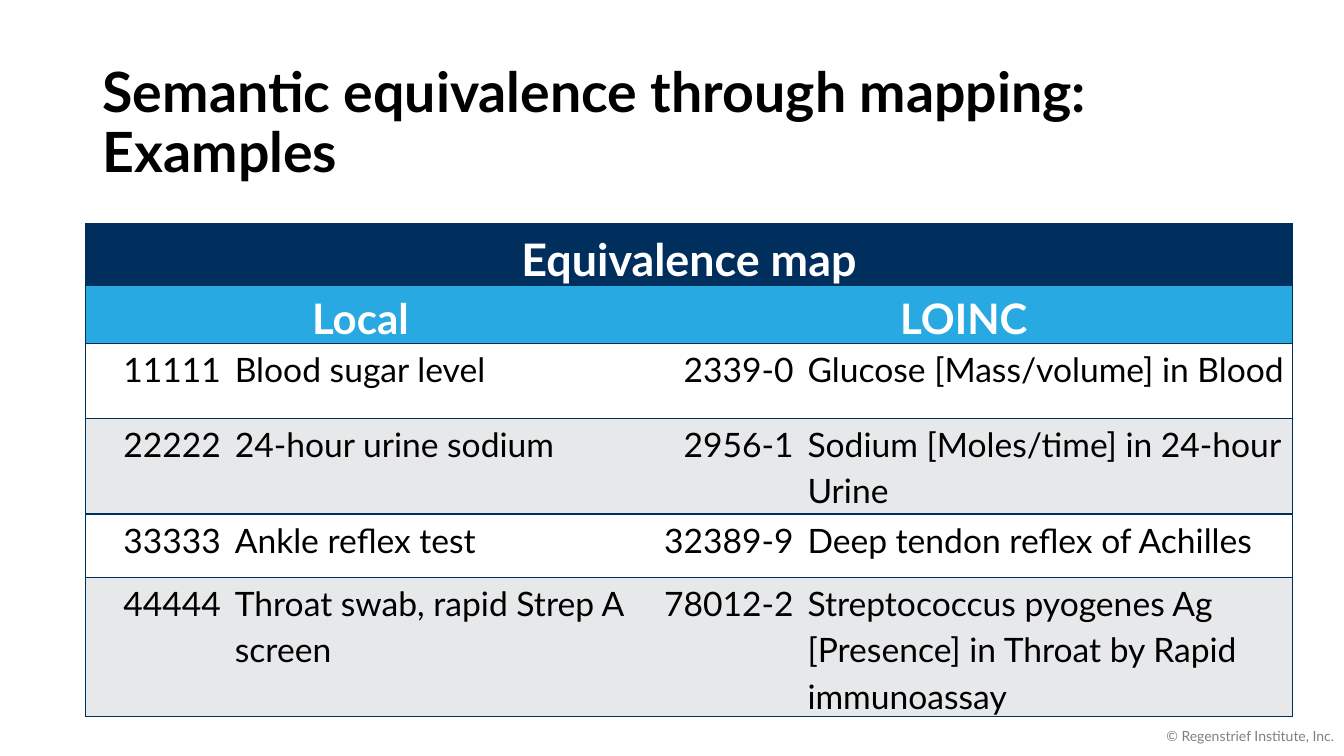
import lxml.etree
import pptx
import pptx.dml.color
import pptx.enum.text
import pptx.oxml.ns
import pptx.util

NAVY = pptx.dml.color.RGBColor(0x00, 0x2E, 0x5D)
SKY = pptx.dml.color.RGBColor(0x29, 0xA9, 0xE1)
PALE = pptx.dml.color.RGBColor(0xE7, 0xE8, 0xEA)
WHITE = pptx.dml.color.RGBColor(0xFF, 0xFF, 0xFF)
BLACK = pptx.dml.color.RGBColor(0x00, 0x00, 0x00)
GRAY = pptx.dml.color.RGBColor(0x80, 0x80, 0x80)

ALIGN = pptx.enum.text.PP_ALIGN
ANCHOR = pptx.enum.text.MSO_ANCHOR

COLUMN_WIDTHS = [14.1, 40.4, 16.4, 48.8]
ROW_HEIGHTS = [6.1, 5.7, 7.4, 9.5, 6.3, 13.6]
MAPPINGS = [
    ("11111", "Blood sugar level", "2339-0", "Glucose [Mass/volume] in Blood"),
    ("22222", "24-hour urine sodium", "2956-1", "Sodium [Moles/time] in 24-hour Urine"),
    ("33333", "Ankle reflex test", "32389-9", "Deep tendon reflex of Achilles"),
    ("44444", "Throat swab, rapid Strep A screen", "78012-2",
     "Streptococcus pyogenes Ag [Presence] in Throat by Rapid immunoassay"),
]


def write(frame, text, size, color=BLACK, bold=False, align=ALIGN.LEFT,
          spacing=1.0, after=0):
    paragraph = frame.paragraphs[0]
    paragraph.text = text
    paragraph.alignment = align
    paragraph.line_spacing = spacing
    paragraph.space_after = pptx.util.Pt(after)
    for run in paragraph.runs:
        run.font.name = "Lato"
        run.font.size = pptx.util.Pt(size)
        run.font.bold = bold
        run.font.color.rgb = color


class GridSlide:
    COLUMNS, ROWS = 133.3, 75

    def __init__(self, deck):
        self.slide = deck.slides.add_slide(deck.slide_layouts[6])
        self.column = deck.slide_width / self.COLUMNS
        self.row = deck.slide_height / self.ROWS

    def place(self, left, top, width, height):
        return (round(left * self.column), round(top * self.row),
                round(width * self.column), round(height * self.row))

    def text(self, box, text, **style):
        frame = self.slide.shapes.add_textbox(*self.place(*box)).text_frame
        frame.word_wrap = True
        frame.vertical_anchor = ANCHOR.MIDDLE
        write(frame, text, **style)

    def table(self, left, top, widths, heights):
        box = self.place(left, top, sum(widths), sum(heights))
        table = self.slide.shapes.add_table(len(heights), len(widths), *box).table
        for column, width in zip(table.columns, widths):
            column.width = round(width * self.column)
        for row, height in zip(table.rows, heights):
            row.height = round(height * self.row)
        return table

    def cell(self, table, row, column, text, fill, span=1, **style):
        cell = table.cell(row, column)
        last = column + span - 1
        if span > 1:
            cell.merge(table.cell(row, last))
        cell.margin_left = cell.margin_right = pptx.util.Inches(0.07)
        cell.margin_top = cell.margin_bottom = 0
        write(cell.text_frame, text, spacing=1.15, after=8, **style)
        sides = {"L": column == 0, "R": last == len(table.columns) - 1,
                 "T": True, "B": True}
        for position in range(column, last + 1):
            self.borders(table.cell(row, position), sides)
            table.cell(row, position).fill.solid()
            table.cell(row, position).fill.fore_color.rgb = fill

    def borders(self, cell, sides):
        qn = pptx.oxml.ns.qn
        properties = cell._tc.get_or_add_tcPr()
        for side, drawn in sides.items():
            line = lxml.etree.SubElement(properties, qn(f"a:ln{side}"),
                                         w=str(pptx.util.Pt(1)))
            if drawn:
                paint = lxml.etree.SubElement(line, qn("a:solidFill"))
                lxml.etree.SubElement(paint, qn("a:srgbClr"), val=str(NAVY))
            else:
                lxml.etree.SubElement(line, qn("a:noFill"))


def main():
    deck = pptx.Presentation()
    deck.slide_width = pptx.util.Inches(13.33)
    deck.slide_height = pptx.util.Inches(7.5)
    page = GridSlide(deck)

    page.text((9.2, 6.2, 115, 12.3),
              "Semantic equivalence through mapping:\nExamples",
              size=39.6, bold=True, spacing=0.9)

    equivalence = page.table(8.5, 22.2, COLUMN_WIDTHS, ROW_HEIGHTS)
    heading = {"color": WHITE, "bold": True, "align": ALIGN.CENTER}
    page.cell(equivalence, 0, 0, "Equivalence map", NAVY, span=4, size=32, **heading)
    for column, system in ((0, "Local"), (2, "LOINC")):
        page.cell(equivalence, 1, column, system, SKY, span=2, size=30, **heading)
    for row, mapping in enumerate(MAPPINGS, start=2):
        for column, entry in enumerate(mapping):
            page.cell(equivalence, row, column, entry, PALE if row % 2 else WHITE,
                      size=24, align=ALIGN.LEFT if column % 2 else ALIGN.RIGHT)

    page.text((103.3, 71, 30, 4), "© Regenstrief Institute, Inc.",
              size=10, color=GRAY, align=ALIGN.RIGHT)
    deck.save("out.pptx")


if __name__ == "__main__":
    main()
